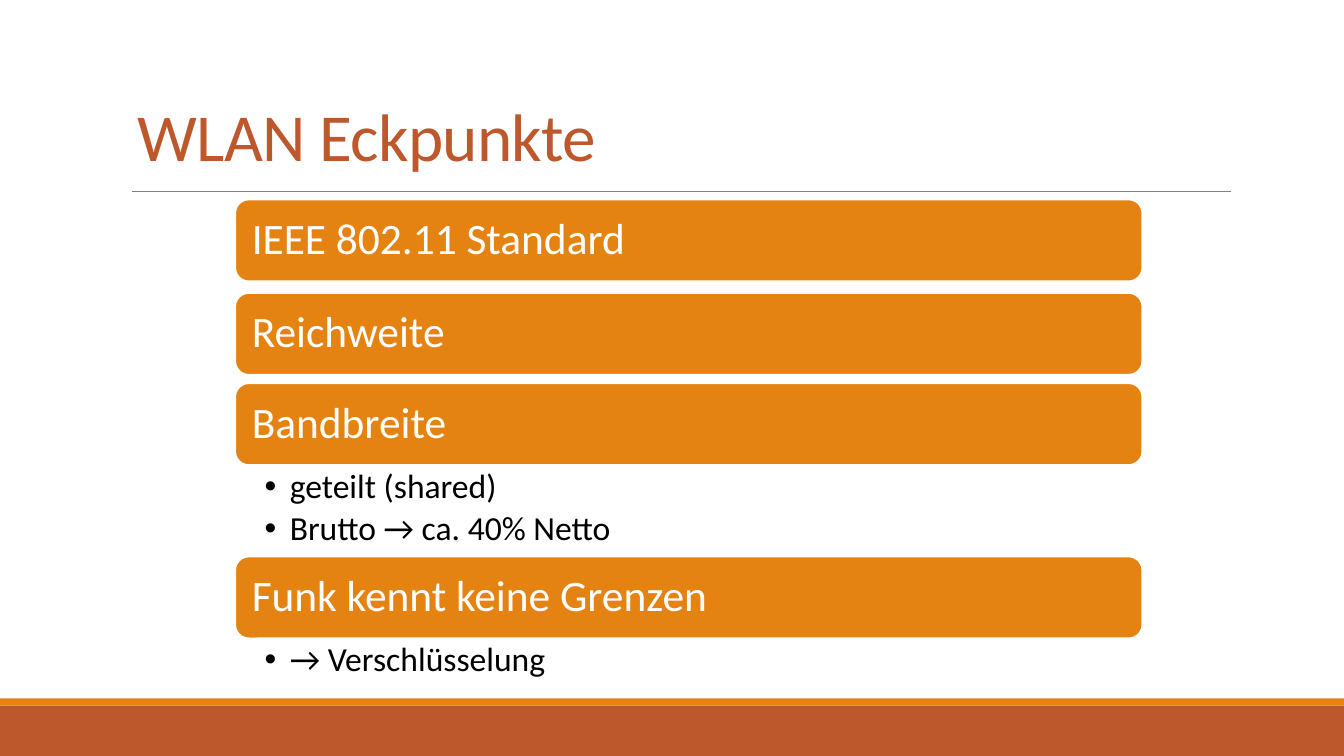
from dataclasses import dataclass

from lxml import etree
from pptx import Presentation
from pptx import util as u
from pptx.dml.color import RGBColor
from pptx.enum import shapes, text
from pptx.oxml.ns import qn

PX = 9525  # EMU per px, 96 px to the inch


@dataclass(frozen=True)
class Theme:
    font: str = "Calibri"
    rust: str = "BD582C"
    orange: str = "E48312"
    grey: str = "808080"
    white: str = "FFFFFF"
    black: str = "000000"
    title_pt: int = 48
    bar_pt: int = 31
    bullet_pt: int = 24


T = Theme()

BAR_H = 78
# (top of the bar, heading, bullets, height of the bullet box)
TOPICS = [
    (0, "IEEE 802.11 Standard", [], 0),
    (89, "Reichweite", [], 0),
    (175, "Bandbreite", ["geteilt (shared)", "Brutto → ca. 40% Netto"], 87),
    (340, "Funk kennt keine Grenzen", ["→ Verschlüsselung"], 54),
]


def px(*values):
    return [u.Emu(v * PX) for v in values]


def rgb(value):
    return RGBColor.from_string(value)


def add_box(s, kind, box, fill):
    sp = s.shapes.add_shape(kind, *px(*box))
    sp.shadow.inherit = False
    sp.fill.solid()
    sp.fill.fore_color.rgb = rgb(fill)
    sp.line.fill.background()
    return sp


def set_frame(sp, anchor, insets):
    """Set wrapping, anchor and the left, top, right and bottom insets."""
    tf = sp.text_frame
    tf.word_wrap = True
    tf.vertical_anchor = anchor
    tf.margin_left, tf.margin_top, tf.margin_right, tf.margin_bottom = px(*insets)
    return tf


def add_run(p, words, size, color, spacing=0.9):
    p.alignment = text.PP_ALIGN.LEFT
    p.line_spacing = spacing
    r = p.add_run()
    r.text = words
    r.font.name = T.font
    r.font.size = u.Pt(size)
    r.font.color.rgb = rgb(color)
    return r


def add_bullet(p):
    pPr = p._p.get_or_add_pPr()
    indent = 24 * PX
    pPr.set("marL", str(indent))
    pPr.set("indent", str(-indent))
    etree.SubElement(pPr, qn("a:buFont")).set("typeface", "Arial")
    etree.SubElement(pPr, qn("a:buChar")).set("char", "•")


def draw_footer(s, x, y, w, h):
    stripe = 7
    add_box(s, shapes.MSO_SHAPE.RECTANGLE, (x, y + stripe, w, h - stripe), T.rust)
    add_box(s, shapes.MSO_SHAPE.RECTANGLE, (x, y, w, stripe), T.orange)


def draw_title(s, x, y, w, h, words):
    """Draw the title at the foot of its box, with a thin rule below it."""
    rule_y = y + h + 10
    rule = s.shapes.add_connector(
        shapes.MSO_CONNECTOR.STRAIGHT, *px(x + 5, rule_y, x + w - 5, rule_y))
    rule.line.color.rgb = rgb(T.grey)
    rule.line.width = u.Pt(0.5)
    etree.SubElement(rule._element.spPr, qn("a:effectLst"))

    sp = s.shapes.add_textbox(*px(x, y, w, h))
    tf = set_frame(sp, text.MSO_ANCHOR.BOTTOM, (10, 5, 10, 5))
    r = add_run(tf.paragraphs[0], words, T.title_pt, T.rust, 0.85)
    r.font._element.set("spc", "-50")


def draw_topic(s, x, y, w, heading, bullets, bullets_h):
    """Draw a heading bar with its bullets below."""
    sp = add_box(s, shapes.MSO_SHAPE.ROUNDED_RECTANGLE, (x, y, w, BAR_H), T.orange)
    sp.line.color.rgb = rgb(T.white)
    sp.line.width = u.Pt(1.25)
    tf = set_frame(sp, text.MSO_ANCHOR.MIDDLE, (12, 12, 12, 12))
    add_run(tf.paragraphs[0], heading, T.bar_pt, T.white)
    if not bullets:
        return

    sp = s.shapes.add_textbox(*px(x, y + BAR_H, w, bullets_h))
    tf = set_frame(sp, text.MSO_ANCHOR.TOP, (28, 4, 23, 4))
    for i, words in enumerate(bullets):
        p = tf.add_paragraph() if i else tf.paragraphs[0]
        add_bullet(p)
        p.space_after = u.Pt(4.5)
        add_run(p, words, T.bullet_pt, T.black)


def draw_topics(s, x, y, w):
    for top, heading, bullets, bullets_h in TOPICS:
        draw_topic(s, x, y + top, w, heading, bullets, bullets_h)


def main():
    prs = Presentation()
    prs.slide_width, prs.slide_height = px(1280, 720)
    s = prs.slides.add_slide(prs.slide_layouts[6])
    draw_footer(s, 0, 665, 1280, 55)
    draw_title(s, 121, 33, 1056, 139, "WLAN Eckpunkte")
    draw_topics(s, 224, 190, 864)
    prs.save("out.pptx")


if __name__ == "__main__":
    main()
